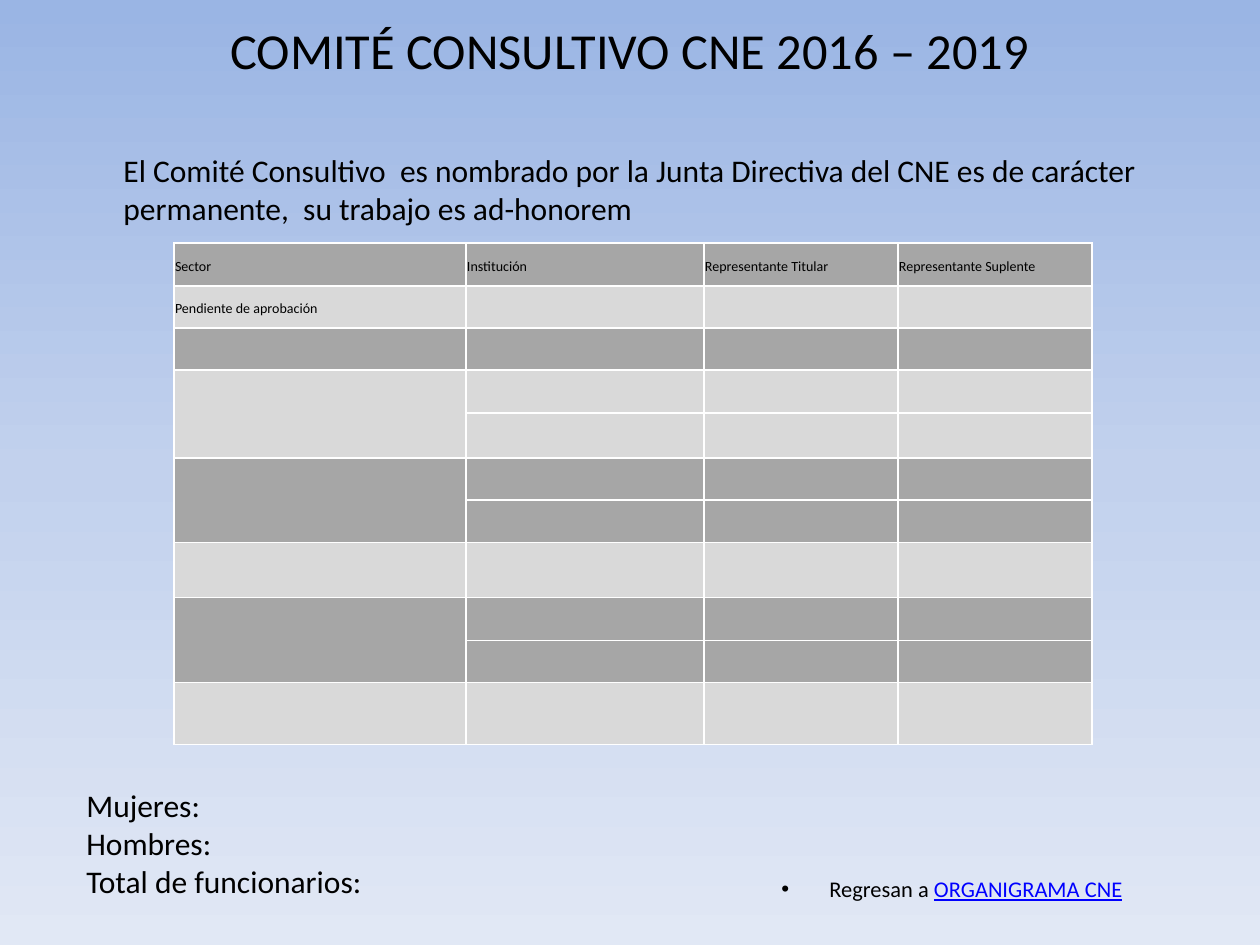
from copy import deepcopy
from itertools import product
from pptx import Presentation
from pptx.dml.color import RGBColor
from pptx.enum.text import MSO_ANCHOR as ANCHOR, PP_ALIGN as ALIGN
from pptx.oxml import parse_xml
from pptx.oxml.ns import nsdecls, qn
from pptx.util import Emu, Pt

PX = 914400 // 126
BLACK = RGBColor(0x00, 0x00, 0x00)
LINK = RGBColor(0x00, 0x00, 0xFF)
DARK = RGBColor(0xA6, 0xA6, 0xA6)
LIGHT = RGBColor(0xD9, 0xD9, 0xD9)
WHITE = RGBColor(0xFF, 0xFF, 0xFF)
SKY = [(0, RGBColor(0x9A, 0xB5, 0xE4)), (0.5, RGBColor(0xC2, 0xD1, 0xED)),
       (1, RGBColor(0xE1, 0xE8, 0xF5))]

TITLE = "COMITÉ CONSULTIVO CNE 2016 – 2019"
INTRO = ("El Comité Consultivo  es nombrado por la Junta Directiva del CNE "
         "es de carácter permanente,  su trabajo es ad-honorem")
TOTALS = ["Mujeres:", "Hombres:", "Total de funcionarios:"]
RETURN_TEXT = [("Regresan a ", False), ("ORGANIGRAMA CNE", True)]
CELL_TEXT = [
    ["Sector", "Institución", "Representante Titular", "Representante Suplente"],
    ["Pendiente de aprobación"],
]
COLS = [292, 238, 194, 194]
SECTORS = [[43], [42], [42], [43, 45], [42, 43], [55], [43, 42], [62]]


def px(*values):
    return [Emu(v * PX) for v in values]


def write(p, text, size=18, color=BLACK, underline=None):
    r = p.add_run()
    r.text = text
    r.font.name, r.font.size = "Calibri", Pt(size)
    r.font.color.rgb, r.font.underline = color, underline


def add_box(s, box, lines, size=18, align=ALIGN.LEFT):
    tf = s.shapes.add_textbox(*px(*box)).text_frame
    tf.word_wrap = True
    for i, line in enumerate(lines):
        p = tf.paragraphs[0] if i == 0 else tf.add_paragraph()
        p.alignment = align
        for text, linked in line if isinstance(line, list) else [(line, False)]:
            write(p, text, size, LINK if linked else BLACK, linked or None)
    return tf


def paint_background(s):
    fill = s.background.fill
    fill.gradient()
    fill.gradient_angle = 270
    stops = s._element.find(".//" + qn("a:gsLst"))
    stops.append(deepcopy(stops[0]))
    for stop, (position, color) in zip(fill.gradient_stops, SKY):
        stop.position, stop.color.rgb = position, color


def format_cell(cell, text, color):
    cell.fill.solid()
    cell.fill.fore_color.rgb = color
    cell.margin_left, cell.margin_right, cell.margin_top, cell.margin_bottom = px(1, 1, 1, 0)
    cell.vertical_anchor = ANCHOR.MIDDLE
    p = cell.text_frame.paragraphs[0]
    p.line_spacing, p.space_after = 1.15, Pt(10)
    write(p, text, 8)
    for i, side in enumerate(("lnL", "lnR", "lnT", "lnB")):
        cell._tc.get_or_add_tcPr().insert(i, parse_xml(
            f'<a:{side} {nsdecls("a")} w="12700"><a:solidFill>'
            f'<a:srgbClr val="{WHITE}"/></a:solidFill></a:{side}>'))


def add_committee_table(s):
    heights = sum(SECTORS, [])
    shape = s.shapes.add_table(len(heights), len(COLS),
                               *px(174, 243, sum(COLS), sum(heights)))
    table = shape.table
    for lines, sizes in ((table.columns, COLS), (table.rows, heights)):
        for line, size in zip(lines, px(*sizes)):
            if lines is table.columns or sizes is COLS:
                line.width = size
            else:
                line.height = size
    row = 0
    for i, sector in enumerate(SECTORS):
        texts = CELL_TEXT[i] if i < len(CELL_TEXT) else []
        texts = texts + [""] * (len(COLS) - len(texts))
        last = row + len(sector) - 1
        for r, c in product(range(row, last + 1), range(len(COLS))):
            format_cell(table.cell(r, c), texts[c], LIGHT if i % 2 else DARK)
        if last > row:
            table.cell(row, 0).merge(table.cell(last, 0))
        row = last + 1


def main():
    """Build the advisory committee slide."""
    prs = Presentation()
    prs.slide_width, prs.slide_height = px(1260, 945)
    s = prs.slides.add_slide(prs.slide_layouts[6])
    paint_background(s)

    tf = add_box(s, (63, 16, 1134, 97), [TITLE], 28.8, ALIGN.CENTER)
    tf.margin_top = Emu(3 * PX)

    tf = add_box(s, (769, 869, 387, 39), [RETURN_TEXT], 12.8)
    p = tf.paragraphs[0]
    p.space_before = Pt(2.6)
    pPr = p._p.get_or_add_pPr()
    pPr.set("marL", str(48 * PX))
    pPr.set("indent", str(-48 * PX))
    pPr.append(parse_xml(f'<a:buFont {nsdecls("a")} typeface="Arial"/>'))
    pPr.append(parse_xml(f'<a:buChar {nsdecls("a")} char="•"/>'))

    add_committee_table(s)
    add_box(s, (74, 780, 630, 127), TOTALS)
    add_box(s, (111, 145, 1181, 89), [INTRO])
    prs.save("out.pptx")


if __name__ == "__main__":
    main()
